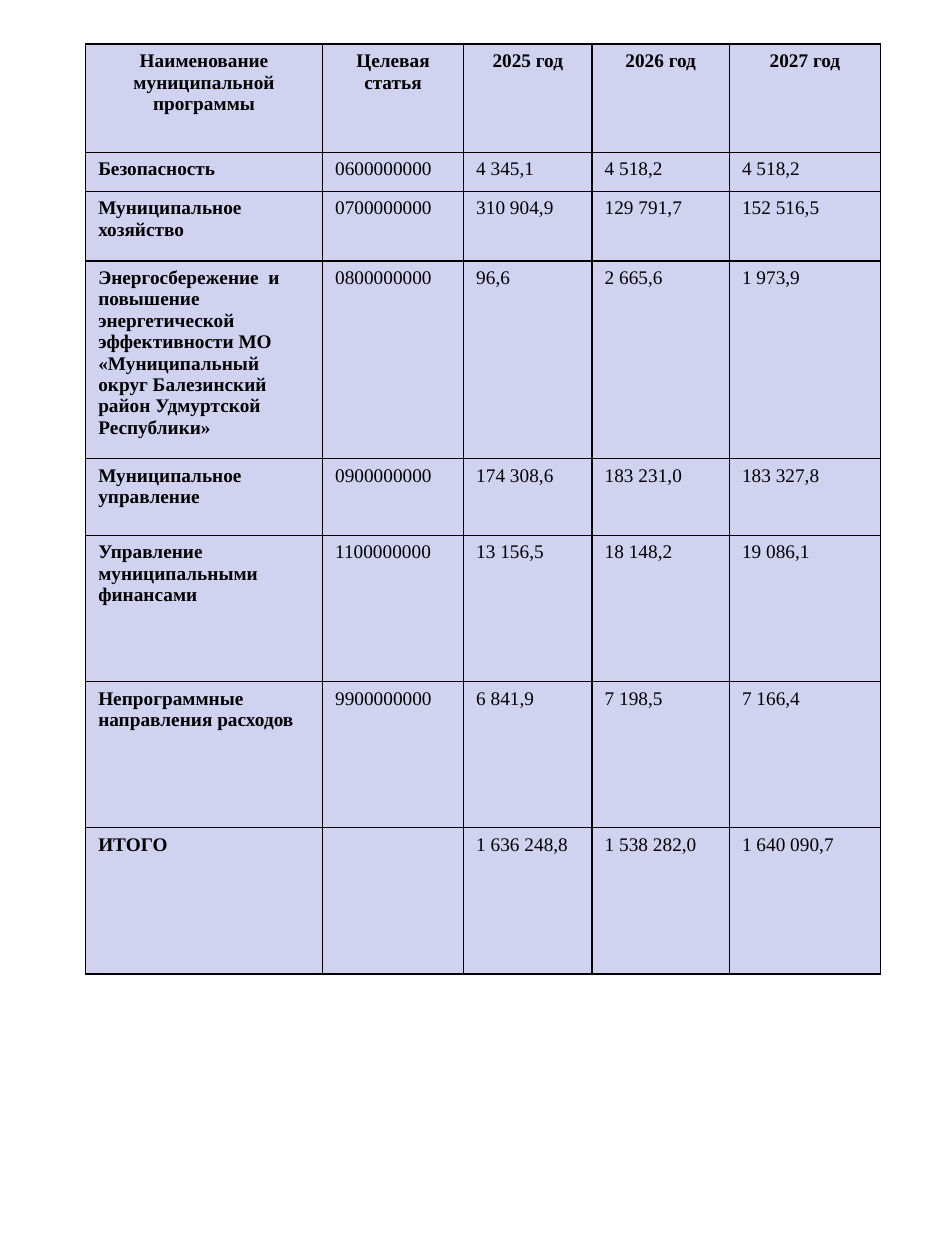
"""Build a budget table of municipal programmes for 2025–2027."""
from lxml.etree import SubElement
from pptx import Presentation
from pptx.dml.color import RGBColor
from pptx.enum.text import PP_ALIGN as Align
from pptx.oxml.ns import qn
from pptx.util import Inches, Pt

COLORS = {"text": "000000", "border": "000000", "cell": "D1D1F0"}
COL_WIDTHS = [1.88, 1.12, 1.02, 1.09, 1.2]
ROW_HEIGHTS = [0.86, 0.31, 0.55, 1.57, 0.61, 1.16, 1.16, 1.16]
PROGRAMMES = [
    ["Наименование муниципальной программы", "Целевая статья", "2025 год", "2026 год", "2027 год"],
    ["Безопасность", "0600000000", "4 345,1", "4 518,2", "4 518,2"],
    ["Муниципальное хозяйство", "0700000000", "310 904,9", "129 791,7", "152 516,5"],
    ["Энергосбережение  и повышение энергетической эффективности МО "
     "«Муниципальный округ Балезинский район Удмуртской Республики»",
     "0800000000", "96,6", "2 665,6", "1 973,9"],
    ["Муниципальное управление", "0900000000", "174 308,6", "183 231,0", "183 327,8"],
    ["Управление муниципальными финансами", "1100000000", "13 156,5", "18 148,2", "19 086,1"],
    ["Непрограммные направления расходов", "9900000000", "6 841,9", "7 198,5", "7 166,4"],
    ["ИТОГО", "", "1 636 248,8", "1 538 282,0", "1 640 090,7"],
]


class SlideBuilder:
    def __init__(self, s, font="Times New Roman", size=11):
        self.s = s
        self.font = font
        self.size = size

    def border(self, cell):
        tc_pr = cell._tc.get_or_add_tcPr()
        for i, side in enumerate(("lnL", "lnR", "lnT", "lnB")):
            ln = tc_pr.makeelement(qn(f"a:{side}"), {"w": str(Pt(1))})
            fill = SubElement(ln, qn("a:solidFill"))
            SubElement(fill, qn("a:srgbClr"), val=COLORS["border"])
            tc_pr.insert(i, ln)

    def cell(self, cell, text, bold, align):
        cell.fill.solid()
        cell.fill.fore_color.rgb = RGBColor.from_string(COLORS["cell"])
        self.border(cell)
        cell.text = text
        p = cell.text_frame.paragraphs[0]
        p.alignment = align
        p.font.name = self.font
        p.font.size = Pt(self.size)
        p.font.bold = bold
        p.font.color.rgb = RGBColor.from_string(COLORS["text"])

    def table(self, left, top, widths, heights, rows):
        frame = self.s.shapes.add_table(
            len(rows), len(widths), Inches(left), Inches(top),
            Inches(sum(widths)), Inches(sum(heights)))
        table = frame.table
        for column, width in zip(table.columns, widths):
            column.width = Inches(width)
        for row, height in zip(table.rows, heights):
            row.height = Inches(height)
        for i, values in enumerate(rows):
            for j, text in enumerate(values):
                align = Align.CENTER if i == 0 else Align.LEFT
                self.cell(table.cell(i, j), text, i == 0 or j == 0, align)


def main():
    prs = Presentation()
    prs.slide_width, prs.slide_height = Inches(7.5), Inches(10)
    s = prs.slides.add_slide(prs.slide_layouts[6])
    SlideBuilder(s).table(0.68, 0.35, COL_WIDTHS, ROW_HEIGHTS, PROGRAMMES)
    prs.save("out.pptx")


if __name__ == "__main__":
    main()
